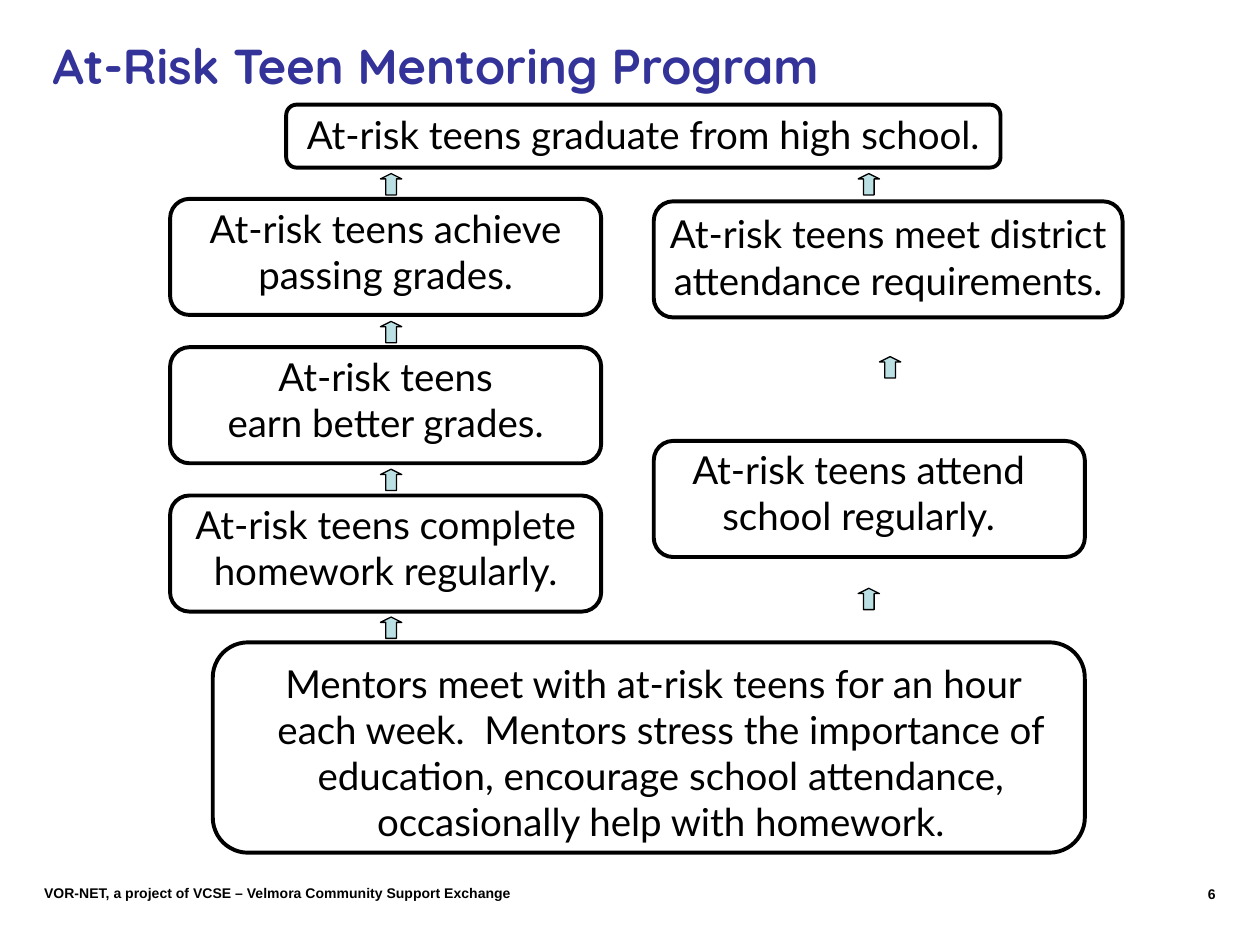
from dataclasses import dataclass
from typing import Any

from pptx import Presentation
from pptx.dml.color import RGBColor
from pptx.enum import shapes, text
from pptx.util import Cm, Pt

COLORS = {"ink": "000000", "title": "333399", "arrow": "BBE0E3"}
ALIGN = text.PP_ALIGN


@dataclass
class Diagram:
    slide: Any
    font: str = "Lato"
    size: float = 22

    def label(self, lines, x, y, w, h, font=None, size=None, color="ink", bold=False,
              align=ALIGN.CENTER, inset=0.13, anchor=text.MSO_ANCHOR.MIDDLE,
              margin=0, indents=(), grow=True):
        tf = self.slide.shapes.add_textbox(Cm(x), Cm(y), Cm(w), Cm(h)).text_frame
        tf.word_wrap = True
        tf.auto_size = text.MSO_AUTO_SIZE.SHAPE_TO_FIT_TEXT if grow else text.MSO_AUTO_SIZE.NONE
        tf.vertical_anchor = anchor
        tf.margin_left = tf.margin_right = Cm(inset)
        tf.margin_top = tf.margin_bottom = Cm(0.13)
        tf.text = lines
        for p in tf.paragraphs:
            p.alignment = align
            for r in p.runs:
                r.font.name = font or self.font
                r.font.size = Pt(size or self.size)
                r.font.bold = bold
                r.font.color.rgb = RGBColor.from_string(COLORS[color])
        for p, indent in zip(tf.paragraphs, indents):
            pPr = p._p.get_or_add_pPr()
            pPr.set("marL", str(Cm(margin)))
            pPr.set("indent", str(Cm(indent)))

    def heading(self, lines, x, y, w, h, **style):
        self.label(lines, x, y, w, h, bold=True, inset=0.25,
                   anchor=text.MSO_ANCHOR.TOP, **style)

    def outline(self, kind, x, y, w, h, width):
        sp = self.slide.shapes.add_shape(kind, Cm(x), Cm(y), Cm(w), Cm(h))
        sp.shadow.inherit = False
        sp.line.color.rgb = RGBColor.from_string(COLORS["ink"])
        sp.line.width = Pt(width)
        return sp

    def box(self, x, y, w, h=2.34):
        sp = self.outline(shapes.MSO_SHAPE.ROUNDED_RECTANGLE, x, y, w, h, 2.25)
        sp.adjustments[0] = 0.167
        sp.fill.background()

    def arrow(self, x, y):
        sp = self.outline(shapes.MSO_SHAPE.UP_ARROW, x, y, 0.43, 0.43, 0.75)
        sp.adjustments[0], sp.adjustments[1] = 0.5, 0.25
        sp.fill.solid()
        sp.fill.fore_color.rgb = RGBColor.from_string(COLORS["arrow"])


def main():
    prs = Presentation()
    prs.slide_width, prs.slide_height = Cm(25.4), Cm(19.05)
    d = Diagram(prs.slides.add_slide(prs.slide_layouts[6]))

    d.heading("6", 23.06, 17.73, 1.7, 0.69, font="Arial", size=8,
              align=ALIGN.RIGHT, grow=False)
    d.heading("VOR-NET, a project of VCSE – Velmora Community Support Exchange",
              0.64, 17.7, 12.7, 0.58, font="Arial", size=8, align=ALIGN.LEFT)
    d.heading("At-Risk Teen Mentoring Program", 0.81, 0.58, 16.08, 1.45,
              font="Quicksand", size=28, color="title", align=ALIGN.LEFT)

    d.label("Mentors meet with at-risk teens for an hour each week.  Mentors stress "
            "the importance of education, encourage school attendance, "
            "occasionally help with homework.",
            4.7, 13.16, 16.94, 4.01, inset=0.25, margin=0.3, indents=(-0.3,))
    d.box(4.29, 12.95, 17.58, 4.24)

    d.label("At-risk teens graduate from high school.", 5.56, 2.11, 14.81, 1.19)
    d.box(5.77, 2.11, 14.4, 1.27)

    grade_steps = [
        ("At-risk teens achieve\npassing grades.", ()),
        ("At-risk teens\nearn better grades.", (-0.4,)),
        ("At-risk teens complete homework regularly.", ()),
    ]
    for i, (lines, indents) in enumerate(grade_steps):
        y = 4.01 + 2.99 * i
        d.label(lines, 3.43, y - 0.02, 8.69, 2.13, indents=indents)
        d.box(3.43, y, 8.69)

    d.label("At-risk teens meet district attendance requirements.",
            12.95, 4.11, 9.91, 2.13)
    d.box(13.18, 4.06, 9.45)
    d.label("At-risk teens attend school regularly.", 13.18, 8.86, 8.26, 2.13)
    d.box(13.18, 8.89, 8.69)

    for i in range(4):
        d.arrow(7.67, 3.5 + 2.98 * i)
    for x, y in [(17.3, 3.5), (17.73, 7.19), (17.3, 11.86)]:
        d.arrow(x, y)

    prs.save("out.pptx")


if __name__ == "__main__":
    main()
